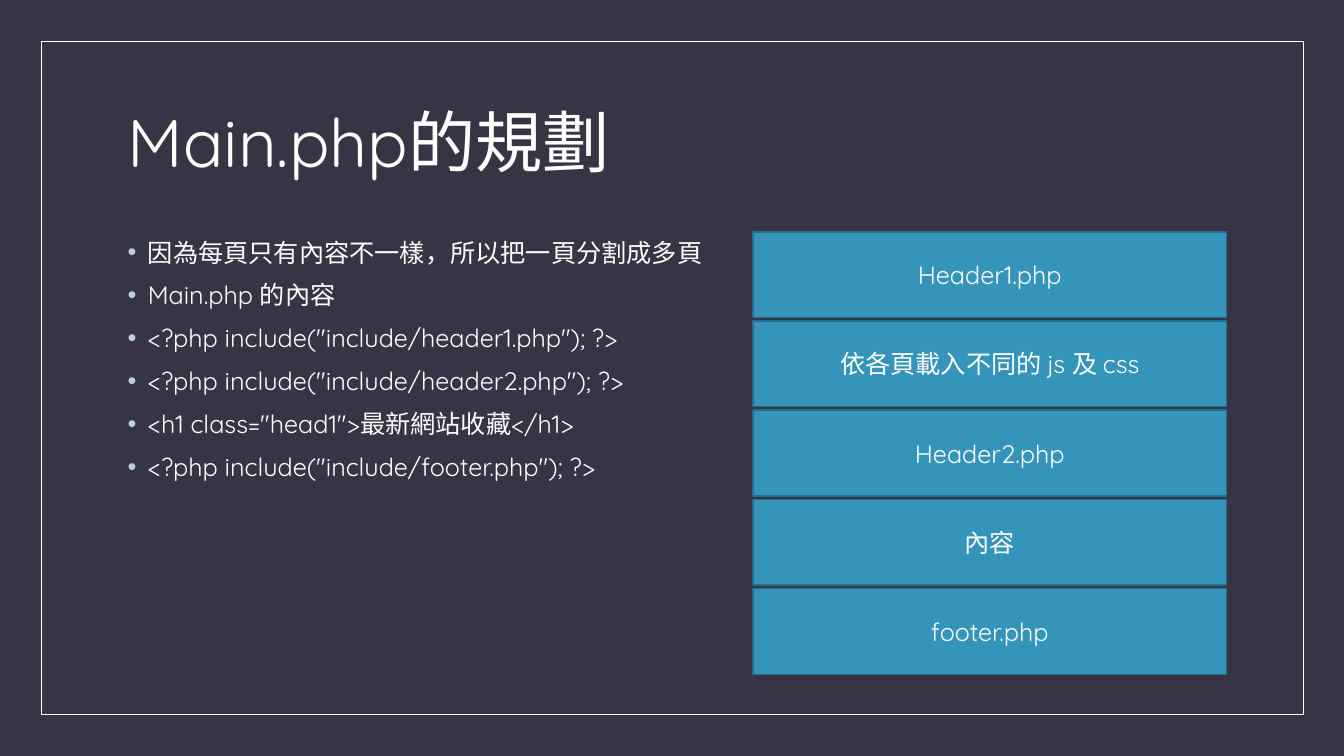
from lxml.etree import SubElement
from pptx import Presentation
from pptx.dml.color import RGBColor
from pptx.enum.shapes import MSO_SHAPE
from pptx.enum.text import MSO_ANCHOR, MSO_AUTO_SIZE, PP_ALIGN
from pptx.oxml.ns import qn
from pptx.util import Pt

COLORS = {
    "background": "373545",
    "text": "FFFFFF",
    "bullet": "BCD0E0",
    "block": "3494BA",
    "block_edge": "266D8A",
}
FONT = "Quicksand"
HEADING = "Main.php的規劃"
POINTS = [
    "因為每頁只有內容不一樣，所以把一頁分割成多頁",
    "Main.php 的內容",
    '<?php include("include/header1.php"); ?>',
    '<?php include("include/header2.php"); ?>',
    '<h1 class="head1">最新網站收藏</h1>',
    '<?php include("include/footer.php"); ?>',
]
PAGE_PARTS = [
    "Header1.php",
    "依各頁載入不同的 js 及 css",
    "Header2.php",
    "內容",
    "footer.php",
]


def rgb(name):
    return RGBColor.from_string(COLORS[name])


def place(item, box):
    item.left, item.top, item.width, item.height = (Pt(v) for v in box)


def style(paragraph, size, align):
    paragraph.alignment = align
    paragraph.font.name = FONT
    paragraph.font.size = Pt(size)
    paragraph.font.color.rgb = rgb("text")


def add_bullet(paragraph, indent):
    props = paragraph._p.get_or_add_pPr()
    props.set("marL", str(Pt(indent)))
    props.set("indent", str(-Pt(indent)))
    color = SubElement(props, qn("a:buClr"))
    SubElement(color, qn("a:srgbClr"), val=COLORS["bullet"])
    SubElement(props, qn("a:buFont"), typeface="Arial")
    SubElement(props, qn("a:buChar"), char="•")


def add_box(slide, box, edge, edge_width):
    shape = slide.shapes.add_shape(MSO_SHAPE.RECTANGLE, *(Pt(v) for v in box))
    shape.shadow.inherit = False
    shape.line.color.rgb = rgb(edge)
    shape.line.width = Pt(edge_width)
    return shape


def add_frame(slide, box):
    add_box(slide, box, "text", 0.5).fill.background()


def fill_heading(slide, box):
    heading = slide.shapes.title
    place(heading, box)
    frame = heading.text_frame
    frame.text = HEADING
    frame.auto_size = MSO_AUTO_SIZE.NONE
    frame.vertical_anchor = MSO_ANCHOR.MIDDLE
    style(frame.paragraphs[0], 48, PP_ALIGN.LEFT)
    frame.paragraphs[0].line_spacing = 0.9


def fill_points(slide, box):
    points = slide.placeholders[1]
    place(points, box)
    frame = points.text_frame
    frame.text = "\n".join(POINTS)
    frame.auto_size = MSO_AUTO_SIZE.NONE
    frame.vertical_anchor = MSO_ANCHOR.TOP
    for point in frame.paragraphs:
        style(point, 18, PP_ALIGN.LEFT)
        point.space_before = Pt(9)
        add_bullet(point, 14.4)


def add_page_stack(slide, box, gap=2.5):
    left, top, width, height = box
    block_height = (height - gap * (len(PAGE_PARTS) - 1)) / len(PAGE_PARTS)
    for row, label in enumerate(PAGE_PARTS):
        block_top = top + row * (block_height + gap)
        block = add_box(slide, (left, block_top, width, block_height), "block_edge", 1)
        block.fill.solid()
        block.fill.fore_color.rgb = rgb("block")
        block.text_frame.text = label
        block.text_frame.vertical_anchor = MSO_ANCHOR.MIDDLE
        style(block.text_frame.paragraphs[0], 18, PP_ALIGN.CENTER)


def main():
    deck = Presentation()
    deck.slide_width, deck.slide_height = Pt(960), Pt(540)
    slide = deck.slides.add_slide(deck.slide_layouts[1])
    slide.background.fill.solid()
    slide.background.fill.fore_color.rgb = rgb("background")

    add_frame(slide, (29.5, 29.5, 901.5, 481))
    fill_heading(slide, (84, 50.4, 792, 108))
    fill_points(slide, (84, 165.6, 792, 309.6))
    add_page_stack(slide, (537.8, 165.6, 338.4, 316))
    deck.save("out.pptx")


if __name__ == "__main__":
    main()
